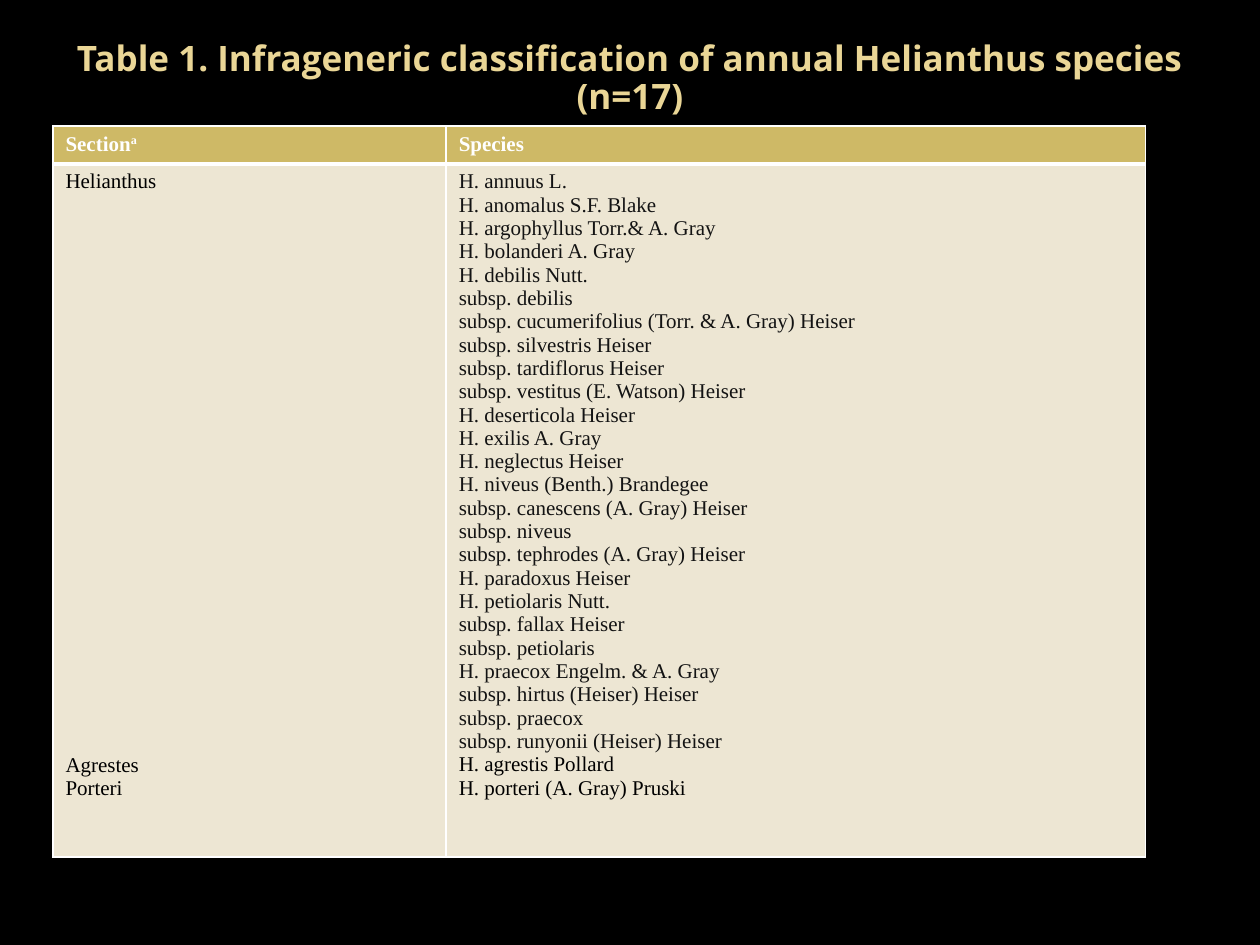
from dataclasses import dataclass

from lxml.etree import SubElement
from pptx import Presentation
from pptx.dml.color import RGBColor
from pptx.enum.text import MSO_ANCHOR, PP_ALIGN
from pptx.oxml.ns import qn
from pptx.util import Inches, Pt


@dataclass(frozen=True)
class Theme:
    background: str = "000000"
    title: str = "EAD696"
    header_fill: str = "CEB966"
    body_fill: str = "EDE6D3"
    rule: str = "FFFFFF"
    header_text: str = "FFFFFF"
    section_text: str = "000000"
    species_text: str = "131313"
    title_font: str = "Open Sans"
    table_font: str = "Times New Roman"
    title_size: int = 20
    table_size: int = 12
    thin_rule: int = 1
    thick_rule: int = 3


THEME = Theme()
WIDTH, HEIGHT = Inches(10), Inches(7.5)

TITLE = "Table 1. Infrageneric classification of annual Helianthus species (n=17)"
HELIANTHUS_SPECIES = [
    "H. annuus L.",
    "H. anomalus S.F. Blake",
    "H. argophyllus Torr.& A. Gray",
    "H. bolanderi A. Gray",
    "H. debilis Nutt.",
    "subsp. debilis",
    "subsp. cucumerifolius (Torr. & A. Gray) Heiser",
    "subsp. silvestris Heiser",
    "subsp. tardiflorus Heiser",
    "subsp. vestitus (E. Watson) Heiser",
    "H. deserticola Heiser",
    "H. exilis A. Gray",
    "H. neglectus Heiser",
    "H. niveus (Benth.) Brandegee",
    "subsp. canescens (A. Gray) Heiser",
    "subsp. niveus",
    "subsp. tephrodes (A. Gray) Heiser",
    "H. paradoxus Heiser",
    "H. petiolaris Nutt.",
    "subsp. fallax Heiser",
    "subsp. petiolaris",
    "H. praecox Engelm. & A. Gray",
    "subsp. hirtus (Heiser) Heiser",
    "subsp. praecox",
    "subsp. runyonii (Heiser) Heiser",
]
OTHER_SPECIES = ["H. agrestis Pollard", "H. porteri (A. Gray) Pruski"]
SECTIONS = ["Helianthus", "Agrestes", "Porteri"]
LINE_PITCH = 13.33  # points between lines of table text


def share(left, top, width, height):
    """Turn shares of the slide into a box."""
    return (round(left * WIDTH), round(top * HEIGHT),
            round(width * WIDTH), round(height * HEIGHT))


def add_span(para, text, font, size, color, bold=False):
    span = para.add_run()
    span.text = text
    span.font.name = font
    span.font.size = Pt(size)
    span.font.bold = bold
    span.font.color.rgb = RGBColor.from_string(color)
    return span


def style_cell(cell, fill, **rules):
    """Draw the four borders, then fill the cell."""
    properties = cell._tc.get_or_add_tcPr()
    for side in "LRTB":
        width = rules.get(side, THEME.thin_rule)
        line = SubElement(properties, qn(f"a:ln{side}"), w=str(Pt(width)))
        solid = SubElement(line, qn("a:solidFill"))
        SubElement(solid, qn("a:srgbClr"), val=THEME.rule)
    cell.fill.solid()
    cell.fill.fore_color.rgb = RGBColor.from_string(fill)


def write_lines(cell, lines):
    """Write (text, color) lines, one paragraph each."""
    frame = cell.text_frame
    for index, (text, color) in enumerate(lines):
        para = frame.add_paragraph() if index else frame.paragraphs[0]
        add_span(para, text, THEME.table_font, THEME.table_size, color)


def add_title(page, box):
    frame = page.shapes.add_textbox(*box).text_frame
    frame.word_wrap = True
    frame.vertical_anchor = MSO_ANCHOR.MIDDLE
    para = frame.paragraphs[0]
    para.alignment = PP_ALIGN.CENTER
    para.line_spacing = 0.9
    add_span(para, TITLE, THEME.title_font, THEME.title_size, THEME.title, bold=True)


def add_species_table(page, box):
    table = page.shapes.add_table(2, 2, *box).table
    width, height = box[2:]
    for column, part in zip(table.columns, (0.36, 0.64)):
        column.width = round(width * part)
    for row, part in zip(table.rows, (0.05, 0.95)):
        row.height = round(height * part)

    # Header row
    for column, heading in enumerate(("Section", "Species")):
        cell = table.cell(0, column)
        style_cell(cell, THEME.header_fill, B=THEME.thick_rule)
        para = cell.text_frame.paragraphs[0]
        add_span(para, heading, THEME.table_font, THEME.table_size,
                 THEME.header_text, bold=True)
    mark = add_span(table.cell(0, 0).text_frame.paragraphs[0], "a", THEME.table_font,
                    THEME.table_size, THEME.header_text, bold=True)
    mark.font._element.set("baseline", "30000")

    # Body row: each later section lines up with its own species
    sections, species = table.cell(1, 0), table.cell(1, 1)
    for cell in (sections, species):
        style_cell(cell, THEME.body_fill, T=THEME.thick_rule)
    write_lines(sections, [(name, THEME.section_text) for name in SECTIONS])
    gap = (len(HELIANTHUS_SPECIES) - 1) * LINE_PITCH
    sections.text_frame.paragraphs[1].space_before = Pt(gap)
    write_lines(species, [(name, THEME.species_text) for name in HELIANTHUS_SPECIES]
                + [(name, THEME.section_text) for name in OTHER_SPECIES])


def main():
    deck = Presentation()
    deck.slide_width, deck.slide_height = WIDTH, HEIGHT
    page = deck.slides.add_slide(deck.slide_layouts[6])
    page.background.fill.solid()
    page.background.fill.fore_color.rgb = RGBColor.from_string(THEME.background)
    add_title(page, share(0.05, 0, 0.9, 1 / 6))
    add_species_table(page, share(0.042, 2 / 15, 0.867, 0.743))
    deck.save("out.pptx")


if __name__ == "__main__":
    main()
